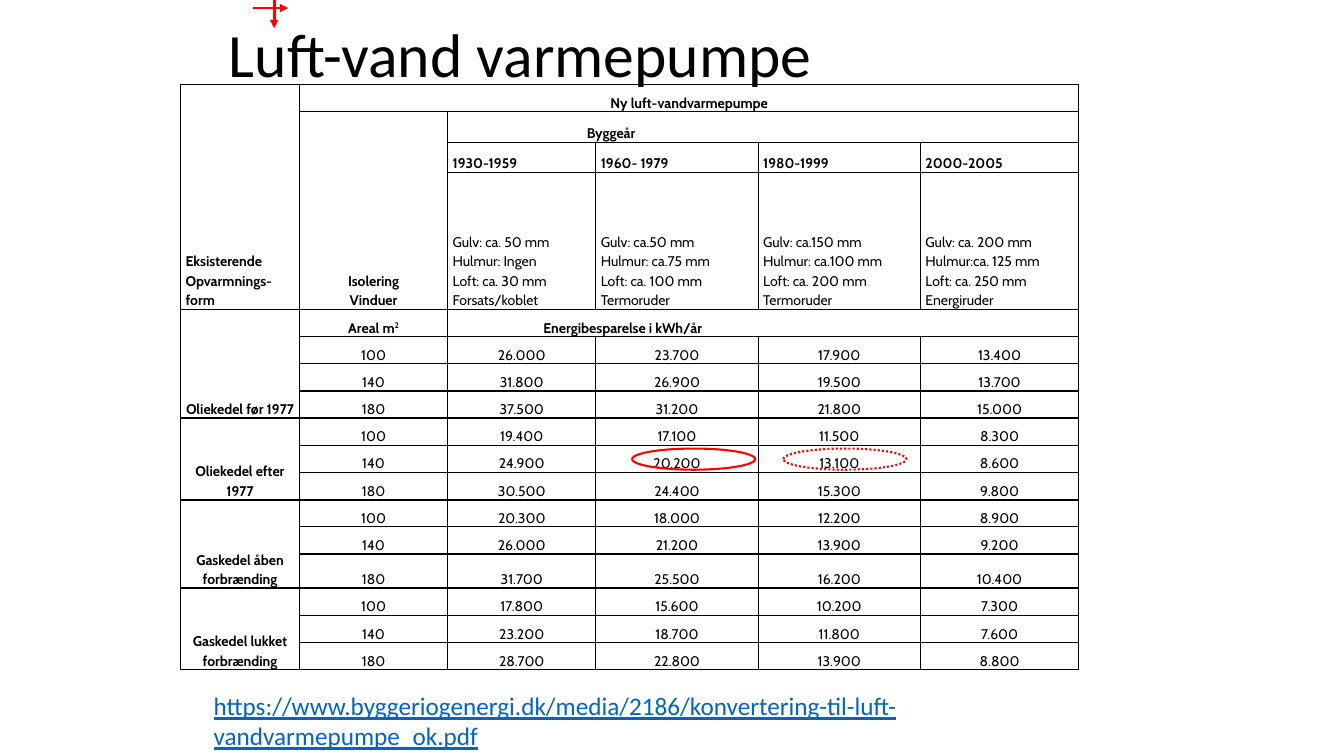
from lxml import etree
from pptx import Presentation, util as u
from pptx.dml.color import RGBColor
from pptx.enum import dml, shapes, text
from pptx.oxml.ns import qn

TITLE = "Luft-vand varmepumpe"
URL = "https://www.byggeriogenergi.dk/media/2186/konvertering-til-luft-vandvarmepumpe_ok.pdf"
BLACK, RED, LINK = "000000", "FF0000", "0563C1"

PERIODS = [
    ("1930-1959", "Gulv: ca. 50 mm\nHulmur: Ingen\nLoft: ca. 30 mm\nForsats/koblet"),
    ("1960- 1979", "Gulv: ca.50 mm\nHulmur: ca.75 mm\nLoft: ca. 100 mm\nTermoruder"),
    ("1980-1999", "Gulv: ca.150 mm\nHulmur: ca.100 mm\nLoft: ca. 200 mm\nTermoruder"),
    ("2000-2005", "Gulv: ca. 200 mm\nHulmur:ca. 125 mm\nLoft: ca. 250 mm\nEnergiruder"),
]
AREAS = ["100", "140", "180"]
SAVINGS = [
    ("Oliekedel før 1977", [
        ("26.000", "23.700", "17.900", "13.400"),
        ("31.800", "26.900", "19.500", "13.700"),
        ("37.500", "31.200", "21.800", "15.000")]),
    ("Oliekedel efter 1977", [
        ("19.400", "17.100", "11.500", "8.300"),
        ("24.900", "20.200", "13.100", "8.600"),
        ("30.500", "24.400", "15.300", "9.800")]),
    ("Gaskedel åben forbrænding", [
        ("20.300", "18.000", "12.200", "8.900"),
        ("26.000", "21.200", "13.900", "9.200"),
        ("31.700", "25.500", "16.200", "10.400")]),
    ("Gaskedel lukket forbrænding", [
        ("17.800", "15.600", "10.200", "7.300"),
        ("23.200", "18.700", "11.800", "7.600"),
        ("28.700", "22.800", "13.900", "8.800")]),
]
COL_WIDTHS = [1.18, 1.47, 1.47, 1.61, 1.61, 1.57]
ROW_HEIGHTS = [0.27, 0.3, 0.3, 1.36] + [0.27] * 9 + [0.34] + [0.27] * 3
HEAD_ROWS = 4
FIRST_DATA_ROW = HEAD_ROWS + 1
# Rows that open a group have a heavier line above them
GROUP_STARTS = {HEAD_ROWS} | {FIRST_DATA_ROW + 3 * i for i in range(1, len(SAVINGS))}
ARROWS = [((2.51, 0.08), (2.86, 0.08)), ((2.72, -0.06), (2.72, 0.28))]
MARKS = [(6.27, None), (7.77, dml.MSO_LINE.ROUND_DOT)]


def rgb(value):
    return RGBColor.from_string(value)


def style(run, size, font, color, bold=False):
    f = run.font
    f.size, f.name, f.bold = u.Pt(size), font, bold
    f.color.rgb = rgb(color)


def put(cell, content, bold=False, center=True, indent=0):
    cell.text_frame.text = content
    for p in cell.text_frame.paragraphs:
        p.alignment = text.PP_ALIGN.CENTER if center else text.PP_ALIGN.LEFT
        p.line_spacing = 1.15
        if indent:
            p._p.get_or_add_pPr().set("marL", str(u.Inches(indent)))
        for r in p.runs:
            style(r, 10, "Cabin", BLACK, bold)


def border(cell, row):
    tcPr = cell._tc.get_or_add_tcPr()
    below = row + (cell.span_height if cell.is_merge_origin else 1)
    top = 1.5 if row in GROUP_STARTS else 1
    bottom = 1.5 if below in GROUP_STARTS else 1
    for side, width in (("L", 1), ("R", 1), ("T", top), ("B", bottom)):
        ln = etree.SubElement(tcPr, qn(f"a:ln{side}"), w=str(u.Pt(width)))
        fill = etree.SubElement(ln, qn("a:solidFill"))
        etree.SubElement(fill, qn("a:srgbClr"), val=BLACK)


def fill_head(table):
    for top, left, bottom, right in [(0, 0, 3, 0), (0, 1, 0, 5), (1, 1, 3, 1),
                                     (1, 2, 1, 5), (4, 2, 4, 5)]:
        table.cell(top, left).merge(table.cell(bottom, right))
    put(table.cell(0, 0), "Eksisterende\nOpvarmnings-form", True, False)
    put(table.cell(0, 1), "Ny luft-vandvarmepumpe", True)
    put(table.cell(1, 1), "Isolering\nVinduer", True)
    put(table.cell(1, 2), "Byggeår", True, False, 1.33)
    for col, (years, insulation) in enumerate(PERIODS, 2):
        put(table.cell(2, col), years, True, False)
        put(table.cell(3, col), insulation, False, False)

    area = table.cell(HEAD_ROWS, 1)
    put(area, "Areal m", True)
    r = area.text_frame.paragraphs[0].add_run()
    r.text = "2"
    style(r, 10, "Cabin", BLACK, True)
    r.font._element.set("baseline", "30000")
    put(table.cell(HEAD_ROWS, 2), "Energibesparelse i kWh/år", True, False, 0.9)


def fill_savings(table):
    for i, (heating, rows) in enumerate(SAVINGS):
        start = FIRST_DATA_ROW + len(AREAS) * i
        label = table.cell(start if i else HEAD_ROWS, 0)
        label.merge(table.cell(start + len(AREAS) - 1, 0))
        put(label, heating, True)
        for row, (area, values) in enumerate(zip(AREAS, rows), start):
            for col, value in enumerate((area, *values), 1):
                put(table.cell(row, col), value)


def add_savings_table(slide):
    frame = slide.shapes.add_table(len(ROW_HEIGHTS), len(COL_WIDTHS), u.Inches(1.79), u.Inches(0.84),
                                   u.Inches(sum(COL_WIDTHS)), u.Inches(sum(ROW_HEIGHTS)))
    table = frame.table
    table.first_row = table.horz_banding = False
    for column, width in zip(table.columns, COL_WIDTHS):
        column.width = u.Inches(width)
    for row, height in zip(table.rows, ROW_HEIGHTS):
        row.height = u.Inches(height)
    fill_head(table)
    fill_savings(table)
    for row in range(len(ROW_HEIGHTS)):
        for col in range(len(COL_WIDTHS)):
            cell = table.cell(row, col)
            cell.margin_left = cell.margin_right = u.Inches(0.05)
            cell.margin_top = cell.margin_bottom = 0
            cell.vertical_anchor = text.MSO_ANCHOR.BOTTOM
            border(cell, row)
            cell.fill.background()


def add_arrow(slide, start, end):
    points = [u.Inches(v) for v in (*start, *end)]
    line = slide.shapes.add_connector(shapes.MSO_CONNECTOR.STRAIGHT, *points)
    line.line.color.rgb = rgb(RED)
    line.line.width = u.Pt(2)
    etree.SubElement(line.line._get_or_add_ln(), qn("a:tailEnd"), type="triangle")
    etree.SubElement(line._element.spPr, qn("a:effectLst"))


def add_mark(slide, left, dash):
    sp = slide.shapes.add_shape(shapes.MSO_SHAPE.OVAL, u.Inches(left), u.Inches(4.45),
                                u.Inches(1.22), u.Inches(0.21))
    sp.shadow.inherit = False
    sp.fill.background()
    sp.line.color.rgb = rgb(RED)
    sp.line.width = u.Pt(1.5)
    if dash:
        sp.line.dash_style = dash


def main():
    prs = Presentation()
    prs.slide_width, prs.slide_height = u.Inches(13.33), u.Inches(7.5)
    slide = prs.slides.add_slide(prs.slide_layouts[5])

    title = slide.shapes.title
    title.left, title.top, title.width, title.height = map(u.Inches, (2.17, 0.19, 9, 0.77))
    tf = title.text_frame
    tf.text = TITLE
    tf.auto_size = text.MSO_AUTO_SIZE.NONE
    tf.vertical_anchor = text.MSO_ANCHOR.MIDDLE
    p = tf.paragraphs[0]
    p.alignment, p.line_spacing = text.PP_ALIGN.LEFT, 0.9
    style(p.runs[0], 44, "Calibri", BLACK)

    add_savings_table(slide)
    for start, end in ARROWS:
        add_arrow(slide, start, end)
    for left, dash in MARKS:
        add_mark(slide, left, dash)

    source = slide.shapes.add_textbox(*map(u.Inches, (2.02, 6.8, 8.81, 0.71)))
    tf = source.text_frame
    tf.word_wrap = True
    tf.text = URL
    r = tf.paragraphs[0].runs[0]
    style(r, 18, "Calibri", LINK)
    r.font.underline = True

    prs.save("out.pptx")


if __name__ == "__main__":
    main()
